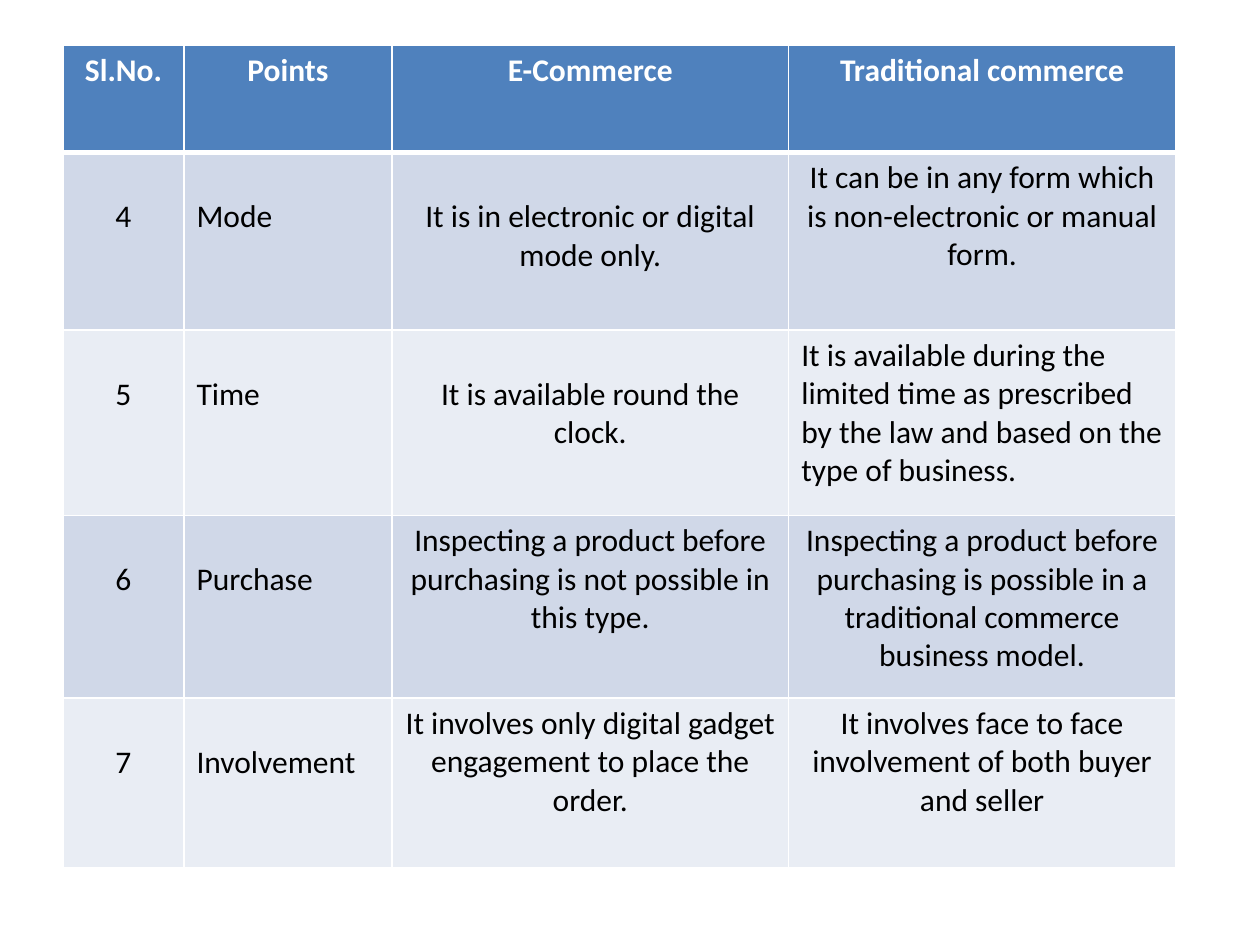
from lxml import etree
from pptx import Presentation
from pptx.dml.color import RGBColor
from pptx.enum.text import PP_ALIGN
from pptx.oxml.ns import qn
from pptx.util import Inches, Pt

LEFT, MID = PP_ALIGN.LEFT, PP_ALIGN.CENTER
HUES = {"head": "4F81BD", "dark": "D0D8E8", "light": "E9EDF4",
        "white": "FFFFFF", "black": "000000"}
WIDTHS = [0.96, 1.65, 3.15, 3.07]
HEIGHTS = [0.85, 1.41, 1.47, 1.45, 1.35]
TOP, LOW = 0.05, 0.36
HEADS = ["Sl.No.", "Points", "E-Commerce", "Traditional commerce"]
ROWS = [
    ["4", "Mode", "It is in electronic or digital mode only.",
     "It can be in any form which is non-electronic or manual form."],
    ["5", "Time", "It is available round the clock.",
     "It is available during the limited time as prescribed by the law "
     "and based on the type of business."],
    ["6", "Purchase",
     "Inspecting a product before purchasing is not possible in this type.",
     "Inspecting a product before purchasing is possible in a traditional "
     "commerce business model."],
    ["7", "Involvement",
     "It involves only digital gadget engagement to place the order.",
     "It involves face to face involvement of both buyer and seller"],
]
LOWERED = {(1, 2), (2, 2)}
FLUSH = {(2, 3)}


def color(name):
    return RGBColor.from_string(HUES[name])


def add_edges(cell, sizes):
    props = cell._tc.get_or_add_tcPr()
    for spot, (side, size) in enumerate(sizes.items()):
        line = etree.Element(qn(f"a:ln{side}"), w=str(Pt(size)))
        fill = etree.SubElement(line, qn("a:solidFill"))
        etree.SubElement(fill, qn("a:srgbClr"), val=HUES["white"])
        props.insert(spot, line)


def set_cell(cell, text, fill, ink, align, top, bold):
    cell.fill.solid()
    cell.fill.fore_color.rgb = color(fill)
    cell.margin_top = Inches(top)
    para = cell.text_frame.paragraphs[0]
    para.alignment = align
    run = para.add_run()
    run.text = text
    run.font.name = "Calibri"
    run.font.size = Pt(18)
    run.font.bold = bold
    run.font.color.rgb = color(ink)


def add_grid(slide):
    frame = slide.shapes.add_table(
        len(HEIGHTS), len(WIDTHS), Inches(0.5), Inches(0.36),
        Inches(sum(WIDTHS)), Inches(sum(HEIGHTS)))
    grid = frame.table
    for col, width in zip(grid.columns, WIDTHS):
        col.width = Inches(width)
    for row, height in zip(grid.rows, HEIGHTS):
        row.height = Inches(height)
    for r, texts in enumerate([HEADS] + ROWS):
        for c, text in enumerate(texts):
            cell = grid.cell(r, c)
            if r == 0:
                set_cell(cell, text, "head", "white", MID, TOP, True)
            else:
                fill = "dark" if r % 2 else "light"
                align = LEFT if c == 1 or (r, c) in FLUSH else MID
                top = LOW if c < 2 or (r, c) in LOWERED else TOP
                set_cell(cell, text, fill, "black", align, top, False)
            add_edges(cell, {"L": 1, "R": 1, "T": 3 if r == 1 else 1,
                             "B": 3 if r == 0 else 1})


def main():
    deck = Presentation()
    deck.slide_width, deck.slide_height = Inches(10), Inches(7.5)
    slide = deck.slides.add_slide(deck.slide_layouts[6])
    add_grid(slide)
    deck.save("out.pptx")


if __name__ == "__main__":
    main()
